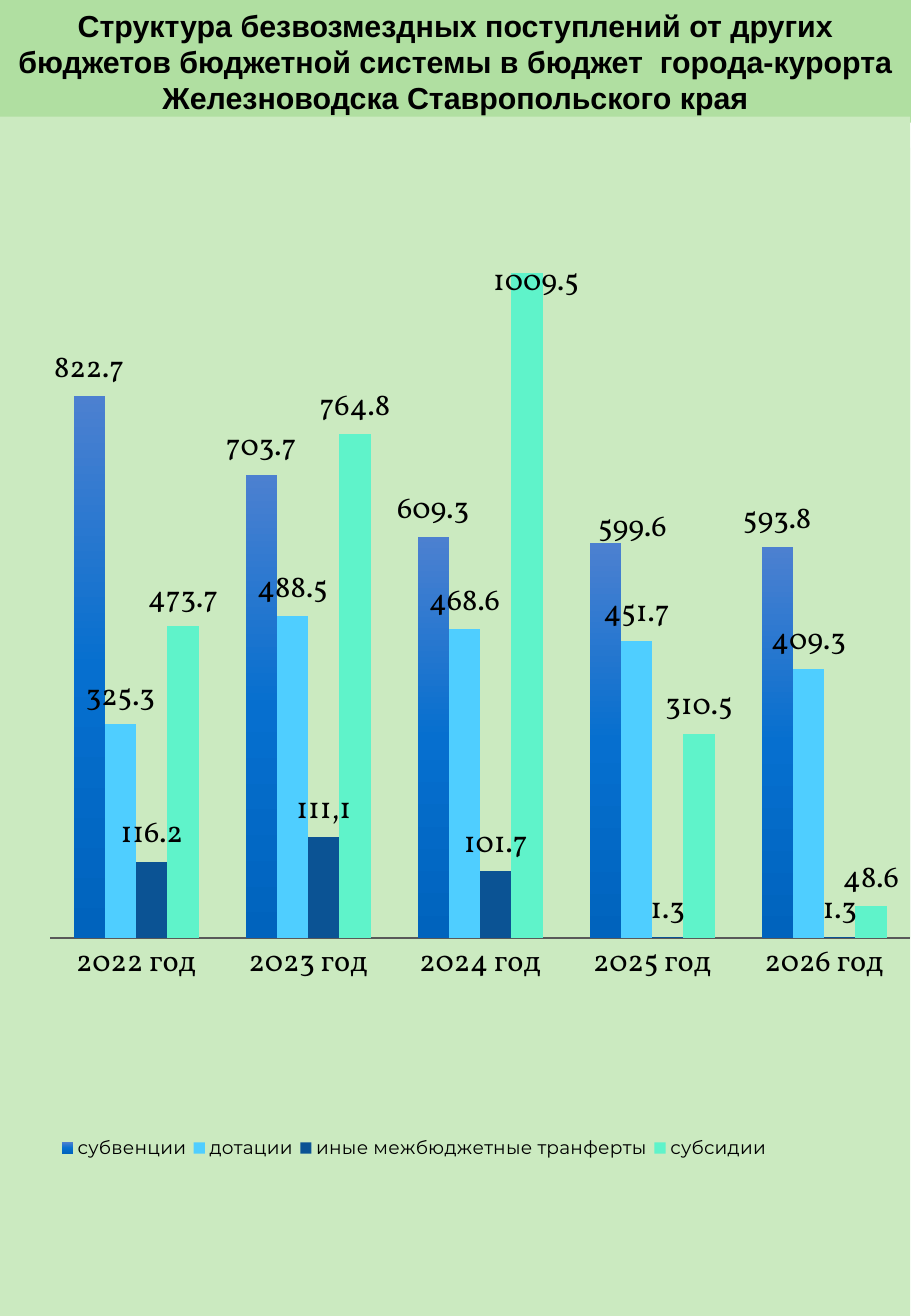
from lxml.etree import fromstring
from pptx import Presentation
from pptx.chart.data import CategoryChartData
from pptx.dml.color import RGBColor
from pptx.enum.chart import XL_CHART_TYPE, XL_LABEL_POSITION, XL_LEGEND_POSITION, XL_TICK_MARK
from pptx.enum.text import MSO_ANCHOR, MSO_AUTO_SIZE, PP_ALIGN
from pptx.util import Inches, Pt

COLORS = {
    "band": "B0DFA1", "panel": "CBEAC0", "text": "000000", "axis": "595959",
    "subventions": "066FCF", "subventions_top": "4C80D0", "subventions_bottom": "0063BD",
    "grants": "4FCEFF", "transfers": "0B5394", "subsidies": "5FF3CA",
}
TITLE = ("Структура безвозмездных поступлений от других бюджетов бюджетной системы "
         "в бюджет  города-курорта Железноводска Ставропольского края")
YEARS = [f"{year} год" for year in range(2022, 2027)]
SERIES = [
    ("субвенции", "subventions", (822.7, 703.7, 609.3, 599.6, 593.8)),
    ("дотации", "grants", (325.3, 488.5, 468.6, 451.7, 409.3)),
    ("иные межбюджетные транферты", "transfers", (116.2, 153.8, 101.7, 1.3, 1.3)),
    ("субсидии", "subsidies", (473.7, 764.8, 1009.5, 310.5, 48.6)),
]
MOVED_LABELS = [(0, 3, 0.03, 0.01), (3, 2, 0.01, 0.03)]
NS = ('xmlns:c="http://schemas.openxmlformats.org/drawingml/2006/chart" '
      'xmlns:a="http://schemas.openxmlformats.org/drawingml/2006/main"')


def rgb(name):
    return RGBColor.from_string(COLORS[name])


def set_font(font, size, name):
    font.size = Pt(size)
    font.name = name
    font.color.rgb = rgb("text")


def layout_xml(x, y, w=None, h=None, inner=False):
    parts = '<c:layoutTarget val="inner"/>' if inner else ""
    if w:
        parts += '<c:xMode val="edge"/><c:yMode val="edge"/>'
    parts += f'<c:x val="{x}"/><c:y val="{y}"/>'
    if w:
        parts += f'<c:w val="{w}"/><c:h val="{h}"/>'
    return fromstring(f"<c:layout {NS}><c:manualLayout>{parts}</c:manualLayout></c:layout>")


def panel_xml():
    return fromstring(f'<c:spPr {NS}><a:solidFill><a:srgbClr val="{COLORS["panel"]}"/>'
                      "</a:solidFill><a:ln><a:noFill/></a:ln></c:spPr>")


def gradient_xml(*names):
    step = 100000 // (len(names) - 1)
    stops = "".join(f'<a:gs pos="{i * step}"><a:srgbClr val="{COLORS[name]}"/></a:gs>'
                    for i, name in enumerate(names))
    return fromstring(f'<a:gradFill {NS}><a:gsLst>{stops}</a:gsLst>'
                      '<a:lin ang="5400000" scaled="0"/></a:gradFill>')


def add_title(s, left, top, width, height):
    sp = s.shapes.title
    sp.left, sp.top, sp.width, sp.height = left, top, width, height
    sp.fill.solid()
    sp.fill.fore_color.rgb = rgb("band")
    tf = sp.text_frame
    tf.text = TITLE
    tf.word_wrap = True
    tf.auto_size = MSO_AUTO_SIZE.NONE
    tf.vertical_anchor = MSO_ANCHOR.MIDDLE
    p = tf.paragraphs[0]
    p.alignment = PP_ALIGN.CENTER
    set_font(p.font, 18, "Arial")
    p.font.bold = True


def style_series(series):
    for ser, (_, color, _) in zip(series, SERIES):
        ser.smooth = False if hasattr(ser, "smooth") else None
        ser.format.fill.solid()
        ser.format.fill.fore_color.rgb = rgb(color)
        labels = ser.data_labels
        labels.show_value = True
        labels.position = XL_LABEL_POSITION.OUTSIDE_END
        set_font(labels.font, 18, "Vollkorn")
    solid = series[0]._element.xpath("./c:spPr/a:solidFill")[0]
    solid.getparent().replace(
        solid, gradient_xml("subventions_top", "subventions", "subventions_bottom"))


def style_special_labels(series):
    for ser, point, x, y in MOVED_LABELS:
        label = series[ser].points[point].data_label
        label.position = XL_LABEL_POSITION.OUTSIDE_END
        set_font(label.font, 18, "Vollkorn")
        idx = series[ser]._element.xpath("./c:dLbls/c:dLbl/c:idx")[0]
        idx.addnext(layout_xml(x, y))
    label = series[2].points[1].data_label
    label.position = XL_LABEL_POSITION.OUTSIDE_END
    p = label.text_frame.paragraphs[0]
    r = p.add_run()
    r.text = "111,1"
    set_font(r.font, 18, "Vollkorn")


def style_axes(chart):
    values = chart.value_axis
    values.minimum_scale, values.maximum_scale = 0, 1200
    values.has_major_gridlines = False
    values.visible = False
    years = chart.category_axis
    years.major_tick_mark = years.minor_tick_mark = XL_TICK_MARK.NONE
    years.format.line.color.rgb = rgb("axis")
    years.format.line.width = Pt(1)


def place_chart_parts(chart):
    space = chart._chartSpace
    for old in space.xpath("./c:chart/c:plotArea/c:layout | ./c:chart/c:legend/c:layout"):
        old.getparent().remove(old)
    plot_area = space.xpath("./c:chart/c:plotArea")[0]
    plot_area.insert(0, layout_xml(0.055, 0.026, 0.945, 0.659, inner=True))
    plot_area.append(panel_xml())
    space.xpath("./c:chart/c:legend/c:legendPos")[0].addnext(
        layout_xml(0.06, 0.84, 0.79, 0.04))
    space.xpath("./c:chart")[0].addnext(panel_xml())


def add_revenue_chart(s, left, top, width, height):
    data = CategoryChartData()
    data.categories = YEARS
    for name, _, values in SERIES:
        data.add_series(name, values)
    chart = s.shapes.add_chart(
        XL_CHART_TYPE.COLUMN_CLUSTERED, left, top, width, height, data).chart
    chart.has_title = False
    set_font(chart.font, 18, "Vollkorn")
    plot = chart.plots[0]
    plot.gap_width, plot.overlap = 150, 0
    plot.vary_by_categories = False
    chart.has_legend = True
    chart.legend.position = XL_LEGEND_POSITION.RIGHT
    chart.legend.include_in_layout = False
    set_font(chart.legend.font, 11, "Montserrat")
    series = list(plot.series)
    style_series(series)
    style_special_labels(series)
    style_axes(chart)
    place_chart_parts(chart)


def main():
    prs = Presentation()
    prs.slide_width, prs.slide_height = Inches(7.5), Inches(10.83)
    s = prs.slides.add_slide(prs.slide_layouts[5])
    add_title(s, 0, 0, prs.slide_width, Inches(1.01))
    top = Inches(0.96)
    add_revenue_chart(s, 0, top, prs.slide_width, prs.slide_height - top)
    prs.save("out.pptx")


if __name__ == "__main__":
    main()
